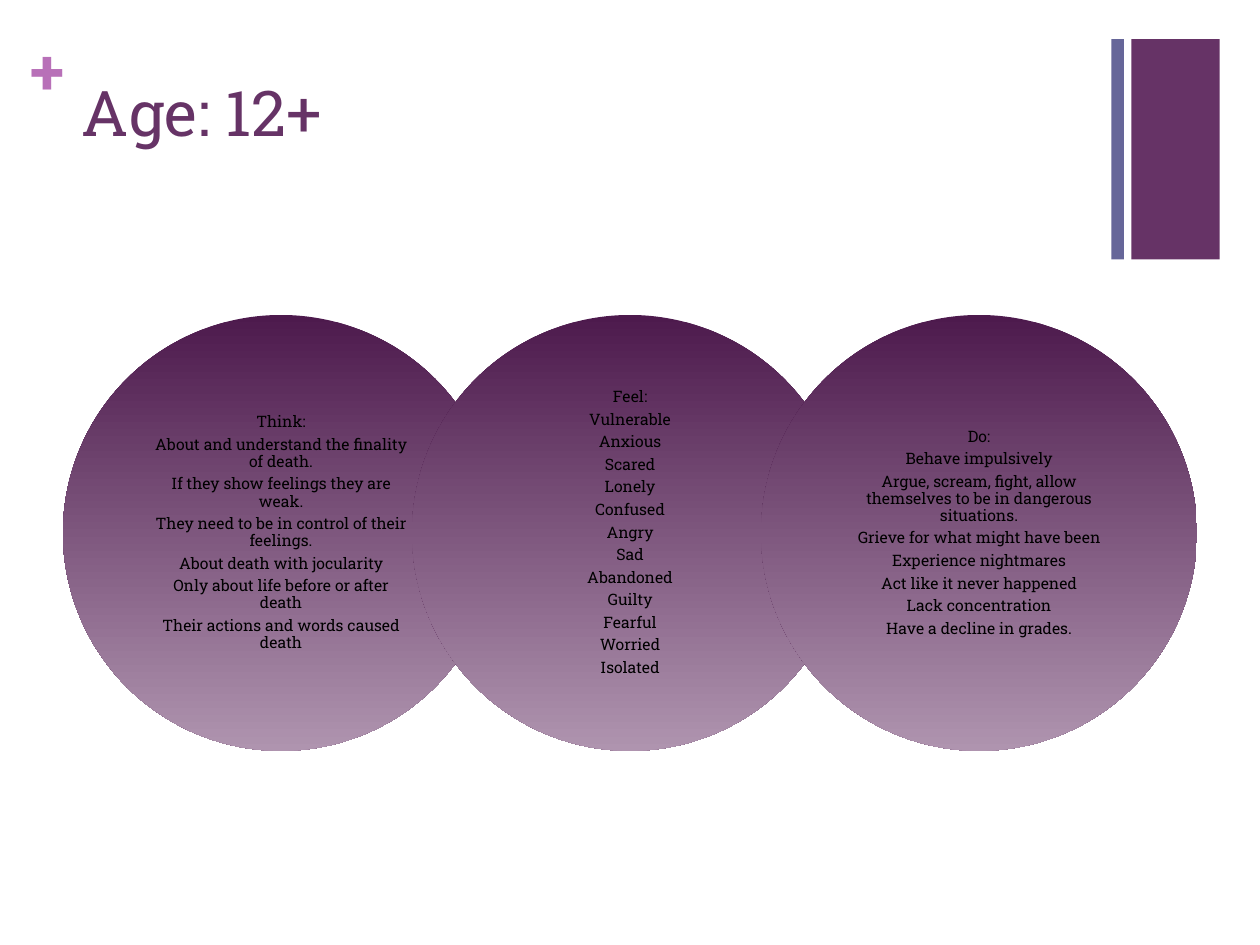
"""Build the slide on how children aged twelve and over think, feel and act."""
from dataclasses import dataclass

from pptx import Presentation
from pptx.dml.color import RGBColor
from pptx.enum.shapes import MSO_SHAPE
from pptx.enum.text import MSO_ANCHOR, MSO_AUTO_SIZE, PP_ALIGN
from pptx.shapes.group import GroupShape
from pptx.slide import Slide
from pptx.text.text import TextFrame
from pptx.util import Inches, Pt

RECTANGLE, OVAL = MSO_SHAPE.RECTANGLE, MSO_SHAPE.OVAL
TOP, MIDDLE = MSO_ANCHOR.TOP, MSO_ANCHOR.MIDDLE
LEFT, CENTER = PP_ALIGN.LEFT, PP_ALIGN.CENTER
NO_AUTOFIT = MSO_AUTO_SIZE.NONE
TITLE_ONLY = 5


@dataclass(frozen=True)
class Theme:
    font: str = "Roboto Slab"
    plum: str = "663366"
    slate: str = "666699"
    orchid: str = "B870B8"
    text: str = "000000"
    circle_top: str = "4D1A4D"
    circle_bottom: str = "AF94AF"
    title_size: float = 36
    body_size: float = 9
    body_gap: float = 3.15


@dataclass(frozen=True)
class Bar:
    left: float
    width: float
    color: str


@dataclass(frozen=True)
class Circle:
    heading: str
    items: tuple[str, ...]


THEME = Theme()
BARS = (Bar(8.98, 0.7, THEME.plum), Bar(8.82, 0.1, THEME.slate))
CIRCLES = (
    Circle("Think:", (
        "About and understand the finality of death.",
        "If they show feelings they are weak.",
        "They need to be in control of their feelings.",
        "About death with jocularity",
        "Only about life before or after death",
        "Their actions and words caused death",
    )),
    Circle("Feel:", (
        "Vulnerable", "Anxious", "Scared", "Lonely", "Confused", "Angry",
        "Sad", "Abandoned", "Guilty", "Fearful", "Worried", "Isolated",
    )),
    Circle("Do:", (
        "Behave impulsively",
        "Argue, scream, fight, allow themselves to be in dangerous situations.",
        "Grieve for what might have been",
        "Experience nightmares",
        "Act like it never happened",
        "Lack concentration",
        "Have a decline in grades.",
    )),
)
CIRCLE_LEFT, CIRCLE_TOP, CIRCLE_SIZE, CIRCLE_STEP = 0.5, 2.5, 3.46, 2.77
TEXT_SIZE = 2.45
TEXT_OFFSET = (CIRCLE_SIZE - TEXT_SIZE) / 2


def write(frame: TextFrame, text: str, size: float, color: str,
          align: PP_ALIGN = LEFT, anchor: MSO_ANCHOR = TOP, bold: bool = False) -> None:
    """Fill a text frame and format every run alike."""
    frame.text = text
    frame.word_wrap = True
    frame.auto_size = NO_AUTOFIT
    frame.vertical_anchor = anchor
    for para in frame.paragraphs:
        para.alignment = align
        for span in para.runs:
            span.font.name = THEME.font
            span.font.size = Pt(size)
            span.font.bold = bold
            span.font.color.rgb = RGBColor.from_string(color)


def set_insets(frame: TextFrame, horizontal: float, vertical: float) -> None:
    """Set equal side insets and equal top and bottom insets."""
    frame.margin_left = frame.margin_right = Inches(horizontal)
    frame.margin_top = frame.margin_bottom = Inches(vertical)


def draw_bar(page: Slide, bar: Bar) -> None:
    """Draw one vertical corner bar."""
    shape = page.shapes.add_shape(
        RECTANGLE, Inches(bar.left), Inches(0.31), Inches(bar.width), Inches(1.75))
    shape.shadow.inherit = False
    shape.fill.solid()
    shape.fill.fore_color.rgb = RGBColor.from_string(bar.color)
    shape.line.fill.background()


def draw_plus(page: Slide) -> None:
    """Draw the plus sign beside the title."""
    box = page.shapes.add_textbox(Inches(0.24), Inches(0.25), Inches(0.29), Inches(0.61))
    write(box.text_frame, "+", THEME.title_size, THEME.orchid, bold=True)
    set_insets(box.text_frame, 0, 0)


def draw_title(page: Slide) -> None:
    """Place and fill the title placeholder."""
    title = page.shapes.title
    title.left, title.top = Inches(0.55), Inches(0.53)
    title.width, title.height = Inches(8.26), Inches(1.22)
    write(title.text_frame, "Age: 12+", THEME.title_size, THEME.plum)


def draw_circle(group: GroupShape, circle: Circle, left: float) -> None:
    """Draw one gradient circle with its centred list."""
    shape = group.shapes.add_shape(
        OVAL, Inches(left), Inches(CIRCLE_TOP), Inches(CIRCLE_SIZE), Inches(CIRCLE_SIZE))
    shape.shadow.inherit = False
    shape.line.fill.background()
    shape.fill.gradient()
    shape.fill.gradient_angle = 270
    for stop, color in zip(shape.fill.gradient_stops, (THEME.circle_top, THEME.circle_bottom)):
        stop.color.rgb = RGBColor.from_string(color)

    box = group.shapes.add_textbox(
        Inches(left + TEXT_OFFSET), Inches(CIRCLE_TOP + TEXT_OFFSET),
        Inches(TEXT_SIZE), Inches(TEXT_SIZE))
    frame = box.text_frame
    write(frame, "\n".join((circle.heading, *circle.items)),
          THEME.body_size, THEME.text, CENTER, MIDDLE)
    set_insets(frame, 0.19, 0.01)
    for para in frame.paragraphs:
        para.line_spacing = 0.9
        para.space_after = Pt(THEME.body_gap)


def main() -> None:
    """Build and save the deck."""
    deck = Presentation()
    deck.slide_width, deck.slide_height = Inches(10), Inches(7.5)
    page = deck.slides.add_slide(deck.slide_layouts[TITLE_ONLY])
    for bar in BARS:
        draw_bar(page, bar)
    draw_plus(page)
    draw_title(page)
    group = page.shapes.add_group_shape()
    for index, circle in enumerate(CIRCLES):
        draw_circle(group, circle, CIRCLE_LEFT + index * CIRCLE_STEP)
    deck.save("out.pptx")


if __name__ == "__main__":
    main()
